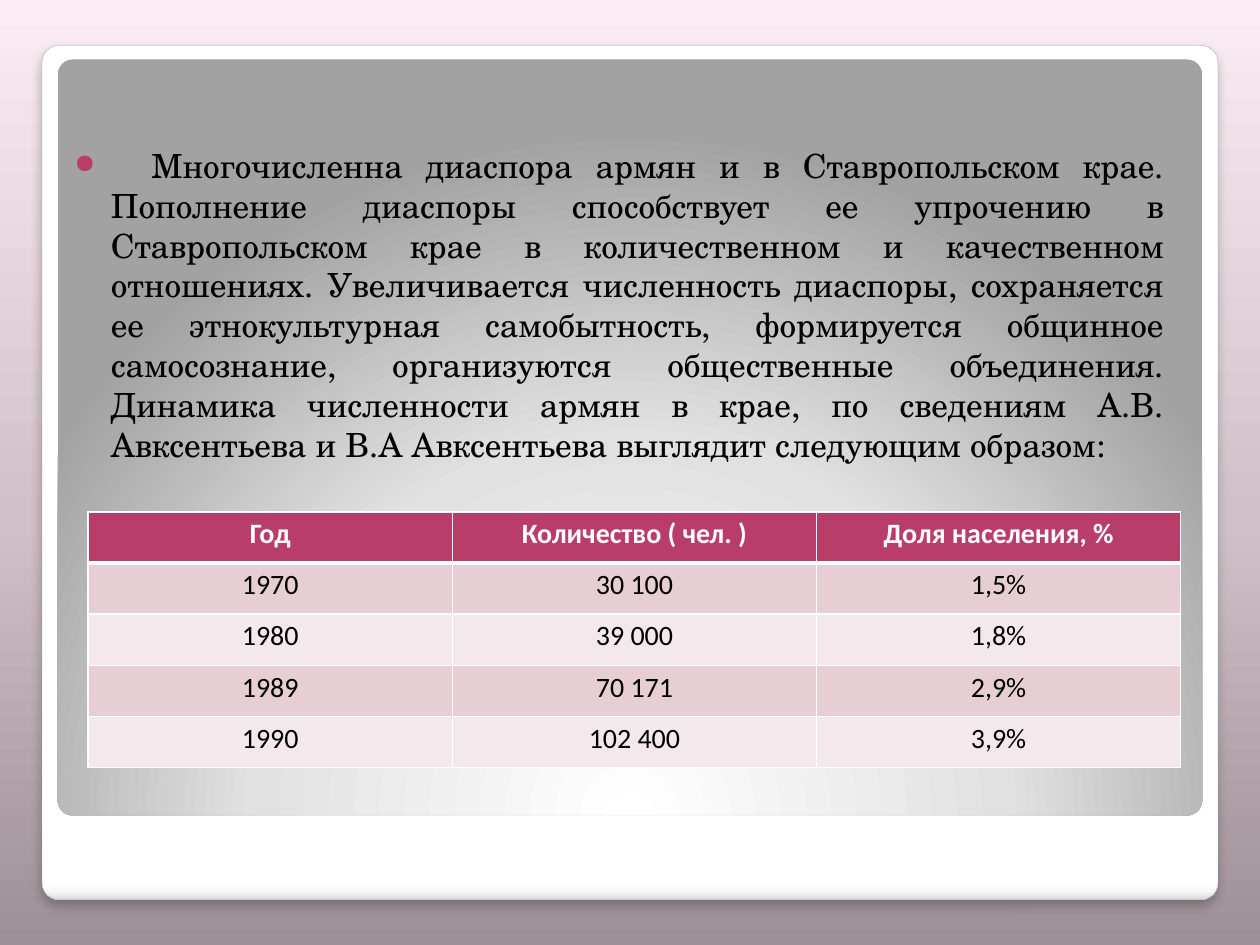
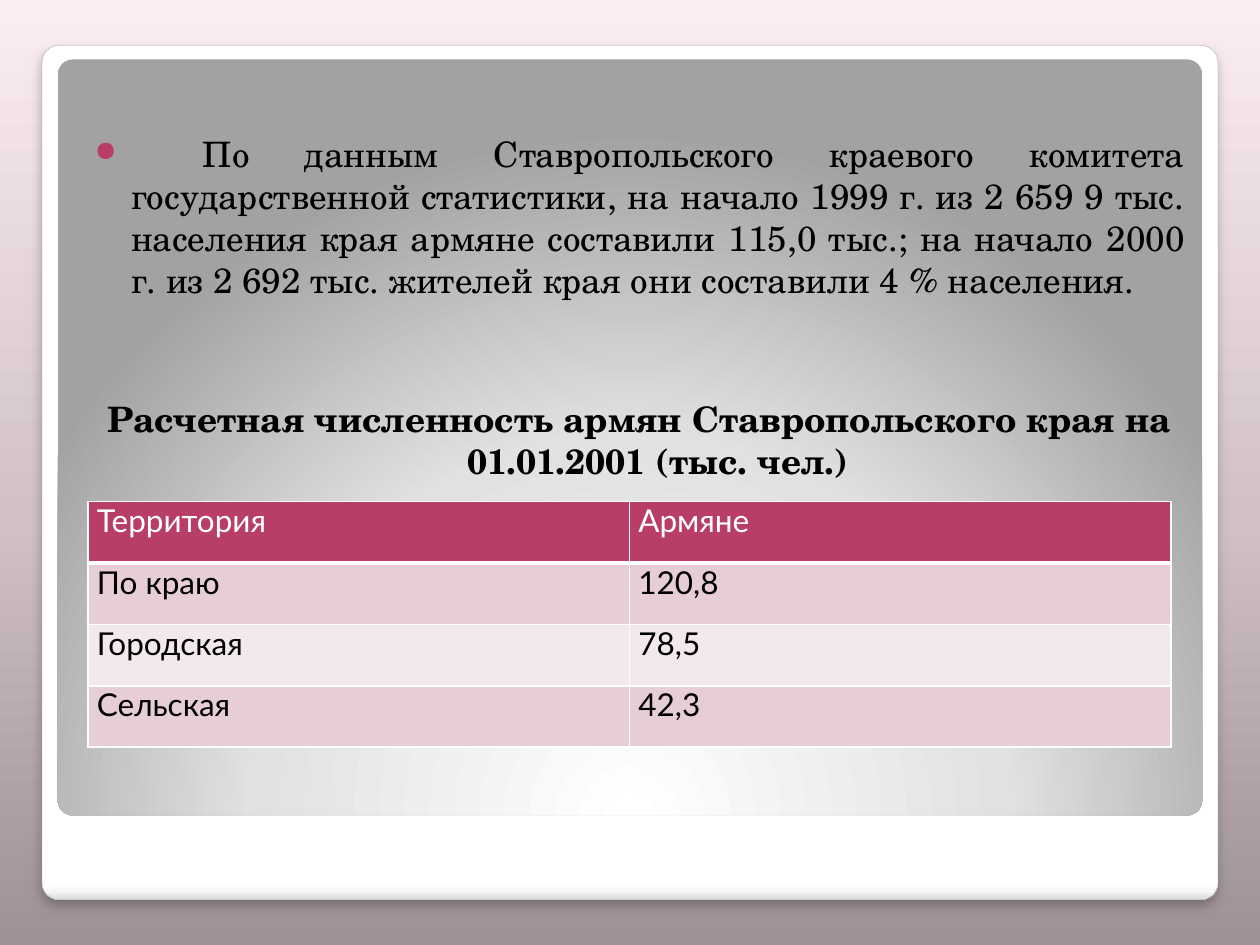
"""Build two slides on the Armenian diaspora of the Stavropol region."""
import dataclasses

import lxml.etree
import pptx
import pptx.dml.color
import pptx.enum.shapes
import pptx.enum.text
import pptx.oxml.ns
import pptx.util

Pt = pptx.util.Pt
qn = pptx.oxml.ns.qn
Sub = lxml.etree.SubElement
Align = pptx.enum.text.PP_ALIGN


@dataclasses.dataclass(frozen=True)
class Theme:
    rose: str = "B83D68"
    blush: str = "E6CED4"
    pale: str = "F3E8EB"
    white: str = "FFFFFF"
    black: str = "000000"
    edge: str = "A4A4A4"
    back: tuple = ((0, "9D9096"), (45, "D1C0C8"), (100, "FBEBF2"))
    card: tuple = ((0, "FFFFFF"), (98, "FFFFFF"), (99, "F7F7F7"), (100, "DADADA"))
    glow: tuple = ((0, "FFFFFF"), (55, "E1E1E1"), (100, "A2A2A2"))
    serif: str = "TeX Gyre Schola"
    indent: float = 20.9
    before: float = 2.5
    bullet: int = 80


theme = Theme()


def shade(root, stops, turn=None):
    """Fill root with a straight blend at an angle, or a round one without."""
    grad = root.find(".//" + qn("a:gradFill"))
    for child in list(grad):
        grad.remove(child)
    group = Sub(grad, qn("a:gsLst"))
    for place, tone in stops:
        stop = Sub(group, qn("a:gs"), pos=str(place * 1000))
        Sub(stop, qn("a:srgbClr"), val=tone)
    if turn is None:
        round_ = Sub(grad, qn("a:path"), {"path": "circle"})
        Sub(round_, qn("a:fillToRect"), l="50000", t="175000", r="50000", b="-75000")
    else:
        Sub(grad, qn("a:lin"), ang=str(turn * 60000), scaled="0")


def write(para, text, font, size, color=theme.black, bold=False, align=Align.LEFT,
          space=None, before=0, hang=0, bullet=False):
    """Put text in a paragraph and format it."""
    run = para.add_run()
    run.text = text
    run.font.name, run.font.size, run.font.bold = font, Pt(size), bold
    run.font.color.rgb = pptx.dml.color.RGBColor.from_string(color)
    para.alignment, para.line_spacing, para.space_before = align, space, Pt(before)
    props = para._p.get_or_add_pPr()
    props.set("marL", str(Pt(hang)))
    props.set("indent", str(-Pt(hang)))
    if bullet:
        Sub(Sub(props, qn("a:buClr")), qn("a:srgbClr"), val=theme.rose)
        Sub(props, qn("a:buSzPct"), val=str(theme.bullet * 1000))
        Sub(props, qn("a:buChar"), char="●")


pages = [
    dict(
        left=28.1, top=50.4, inset=32.5, size=19, caption=None,
        body=" \tМногочисленна диаспора армян и в Ставропольском крае. "
             "Пополнение диаспоры способствует ее упрочению в Ставропольском крае "
             "в количественном и качественном отношениях. Увеличивается численность "
             "диаспоры, сохраняется ее этнокультурная самобытность, формируется "
             "общинное самосознание, организуются общественные объединения. "
             "Динамика численности армян в крае, по сведениям А.В. Авксентьева "
             "и В.А Авксентьева выглядит следующим образом:",
        grid=dict(top=292.5, width=624.3, row=29.25),
        cell=dict(font="Calibri", size=16, align=Align.CENTER, space=1.15),
        strong=True,
        rows=[
            ("Год", "Количество ( чел. )", "Доля населения, %"),
            ("1970", "30 100", "1,5%"),
            ("1980", "39 000", "1,8%"),
            ("1989", "70 171", "2,9%"),
            ("1990", "102 400", "3,9%"),
        ],
    ),
    dict(
        left=39.6, top=41.8, inset=33.7, size=20,
        caption="Расчетная численность армян Ставропольского края "
                "на 01.01.2001 (тыс. чел.)",
        body=" \tПо данным Ставропольского краевого комитета государственной "
             "статистики, на начало 1999 г. из 2 659 9 тыс. населения края армяне "
             "составили 115,0 тыс.; на начало 2000 г. из 2 692 тыс. жителей края "
             "они составили 4 % населения.",
        grid=dict(top=286.6, width=618.8, row=35.1),
        cell=dict(font="Lato", size=18),
        strong=False,
        rows=[
            ("Территория", "Армяне"),
            ("По краю", "120,8"),
            ("Городская", "78,5"),
            ("Сельская", "42,3"),
        ],
    ),
]

deck = pptx.Presentation()
deck.slide_width, deck.slide_height = Pt(720), Pt(540)
deck.slide_master.background.fill.gradient()
shade(deck.slide_master.element, theme.back, 270)

for page in pages:
    slide = deck.slides.add_slide(deck.slide_layouts[6])

    panels = []
    for box, stops, turn in (
        ((24, 25.9, 672, 488.2), theme.card, 90),
        ((33, 34, 654, 432), theme.glow, None),
    ):
        panel = slide.shapes.add_shape(
            pptx.enum.shapes.MSO_SHAPE.ROUNDED_RECTANGLE, *map(Pt, box))
        panel.adjustments[0] = 0.02
        panel.fill.gradient()
        shade(panel._element.spPr, stops, turn)
        panel.line.fill.background()
        panel.shadow.inherit = False
        panels.append(panel)

    card = panels[0]
    card.line.color.rgb = pptx.dml.color.RGBColor.from_string(theme.edge)
    card.line.width = Pt(0.16)
    shadow = Sub(card._element.spPr.find(qn("a:effectLst")), qn("a:outerShdw"),
                 blurRad=str(Pt(6)), dist=str(Pt(4)), dir="5400000", rotWithShape="0")
    Sub(Sub(shadow, qn("a:srgbClr"), val=theme.black), qn("a:alpha"), val="25000")

    frame = slide.shapes.add_textbox(
        Pt(page["left"]), Pt(page["top"]), Pt(644.4), Pt(329.8)).text_frame
    frame.word_wrap = True
    frame.margin_left, frame.margin_right = Pt(14.4), Pt(7.2)
    frame.margin_top, frame.margin_bottom = Pt(page["inset"]), Pt(3.6)
    style = dict(font=theme.serif, size=page["size"], hang=theme.indent)
    write(frame.paragraphs[0], page["body"], align=Align.JUSTIFY,
          before=theme.before, bullet=True, **style)
    if page["caption"]:
        write(frame.add_paragraph(), page["caption"], align=Align.CENTER,
              before=55.5, bold=True, **style)

    grid, rows = page["grid"], page["rows"]
    table = slide.shapes.add_table(
        len(rows), len(rows[0]), Pt(50.4), Pt(grid["top"]),
        Pt(grid["width"]), Pt(grid["row"] * len(rows))).table
    for r, row in enumerate(rows):
        head = r == 0
        fill = theme.rose if head else (theme.pale, theme.blush)[r % 2]
        for c, text in enumerate(row):
            cell = table.cell(r, c)
            cell.margin_left = cell.margin_right = Pt(5)
            cell.margin_top = cell.margin_bottom = 0
            props = cell._tc.get_or_add_tcPr()
            for side in "LRTB":
                thick = (r, side) in ((0, "B"), (1, "T"))
                line = Sub(props, qn("a:ln" + side), w=str(Pt(3 if thick else 1)))
                Sub(Sub(line, qn("a:solidFill")), qn("a:srgbClr"), val=theme.white)
            cell.fill.solid()
            cell.fill.fore_color.rgb = pptx.dml.color.RGBColor.from_string(fill)
            write(cell.text_frame.paragraphs[0], text, bold=head and page["strong"],
                  color=theme.white if head else theme.black, **page["cell"])

deck.save("out.pptx")
